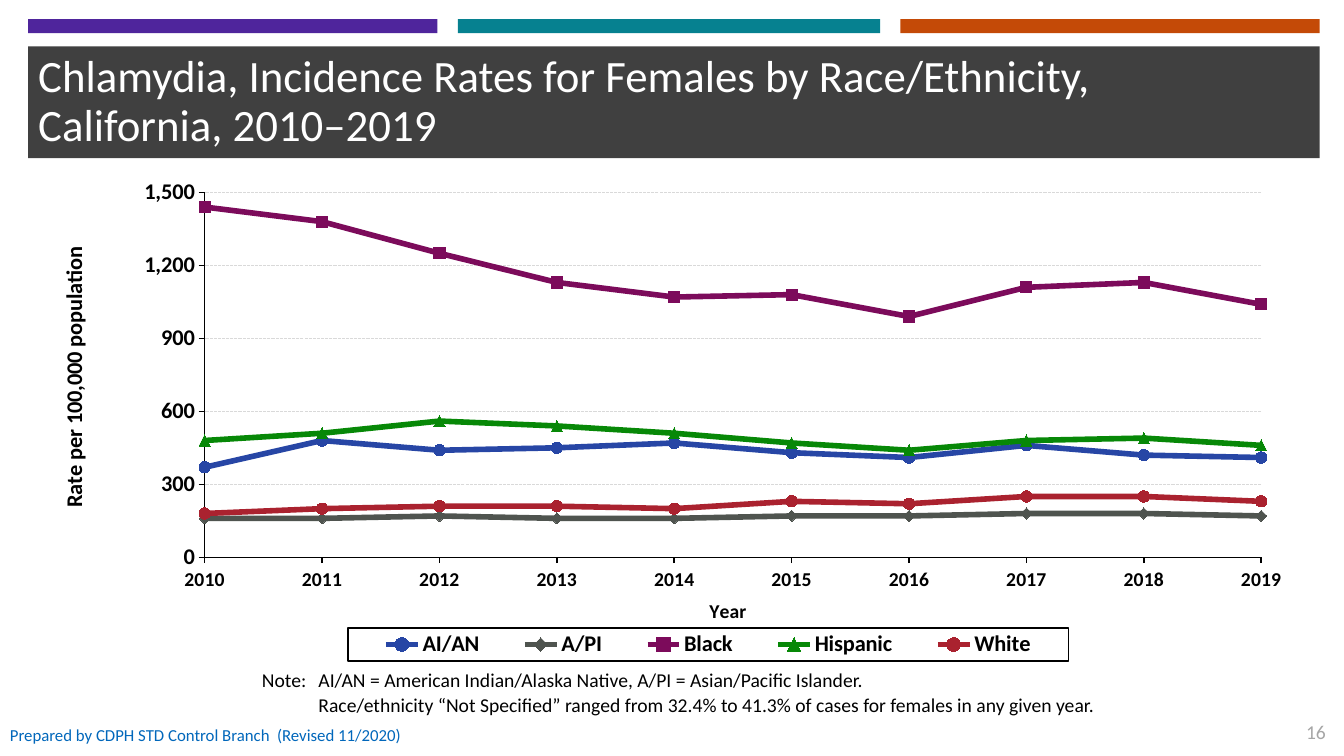
from dataclasses import dataclass

from lxml import etree
from pptx import Presentation
from pptx.chart.data import CategoryChartData
from pptx.dml.color import RGBColor
from pptx.enum.chart import XL_CHART_TYPE, XL_LEGEND_POSITION, XL_MARKER_STYLE, XL_TICK_MARK
from pptx.enum.dml import MSO_LINE
from pptx.enum.shapes import MSO_SHAPE
from pptx.enum.text import MSO_ANCHOR, PP_ALIGN
from pptx.oxml import parse_xml
from pptx.oxml.ns import nsdecls, qn
from pptx.util import Inches, Pt

FONT = "Calibri"
BLACK, WHITE, FOOTER_BLUE = "000000", "FFFFFF", "0167BB"
RECT = MSO_SHAPE.RECTANGLE
TOP, MIDDLE = MSO_ANCHOR.TOP, MSO_ANCHOR.MIDDLE
LEFT, RIGHT = PP_ALIGN.LEFT, PP_ALIGN.RIGHT
CIRCLE, DIAMOND = XL_MARKER_STYLE.CIRCLE, XL_MARKER_STYLE.DIAMOND
SQUARE, TRIANGLE = XL_MARKER_STYLE.SQUARE, XL_MARKER_STYLE.TRIANGLE
LINE_MARKERS, BOTTOM = XL_CHART_TYPE.LINE_MARKERS, XL_LEGEND_POSITION.BOTTOM
TICK_OUT, TICK_NONE = XL_TICK_MARK.OUTSIDE, XL_TICK_MARK.NONE
DASHED = MSO_LINE.SQUARE_DOT
CHART_W, CHART_H = 12.45, 5.06


@dataclass
class Bar:
    left: float
    top: float
    width: float
    height: float
    color: str


@dataclass
class Label:
    left: float
    top: float
    width: float
    height: float
    lines: list[str]
    size: int
    color: str
    anchor: int = TOP
    align: int = LEFT
    wrap: bool = True


@dataclass
class Group:
    name: str
    color: str
    marker: int
    outlined: bool
    rates: list[int]


BARS = [
    Bar(0.28, 0.46, 12.81, 1.11, "404040"),
    Bar(0.28, 0.19, 4.06, 0.14, "4F259C"),
    Bar(4.54, 0.19, 4.19, 0.14, "068190"),
    Bar(8.93, 0.19, 4.16, 0.14, "C44A07"),
]
LABELS = [
    Label(12.82, 7.09, 0.43, 0.34, ["16"], 14, "A6A6A6", align=RIGHT, wrap=False),
    Label(0, 7.09, 2.8, 0.4, ["Prepared by CDPH STD Control Branch"], 12, FOOTER_BLUE, MIDDLE),
    Label(2.65, 7.09, 1.5, 0.4, ["(Revised 11/2020)"], 12, FOOTER_BLUE, MIDDLE),
]
TITLE = Label(0.28, 0.46, 12.81, 1.11,
              ["Chlamydia, Incidence Rates for Females by Race/Ethnicity, ",
               "California, 2010–2019"], 32, WHITE, MIDDLE)
NOTE = Label(2.25, 6.58, 8.85, 0.59,
             ["\tNote:\tAI/AN = American Indian/Alaska Native, A/PI = Asian/Pacific Islander.",
              "\t\tRace/ethnicity “Not Specified” ranged from 32.4% to 41.3% of cases "
              "for females in any given year."], 14, BLACK)
NOTE_TABS = [(0.69, "r"), (0.81, "l")]
YEARS = [str(year) for year in range(2010, 2020)]
GROUPS = [
    Group("AI/AN", "2746A5", CIRCLE, False, [370, 480, 440, 450, 470, 430, 410, 460, 420, 410]),
    Group("A/PI", "4F544F", DIAMOND, True, [160, 160, 170, 160, 160, 170, 170, 180, 180, 170]),
    Group("Black", "7C0B5B", SQUARE, False,
          [1440, 1380, 1250, 1130, 1070, 1080, 990, 1110, 1130, 1040]),
    Group("Hispanic", "078807", TRIANGLE, False,
          [480, 510, 560, 540, 510, 470, 440, 480, 490, 460]),
    Group("White", "AA222F", CIRCLE, True, [180, 200, 210, 210, 200, 230, 220, 250, 250, 230]),
]


def rgb(color: str) -> RGBColor:
    return RGBColor.from_string(color)


def style_font(font, size: float, color: str, bold: bool = False) -> None:
    font.name, font.size, font.bold = FONT, Pt(size), bold
    font.color.rgb = rgb(color)


def style_line(line, color: str, width: float) -> None:
    line.color.rgb = rgb(color)
    line.width = Pt(width)


def add_bar(s, bar: Bar) -> None:
    sp = s.shapes.add_shape(RECT, Inches(bar.left), Inches(bar.top),
                            Inches(bar.width), Inches(bar.height))
    sp.shadow.inherit = False
    sp.fill.solid()
    sp.fill.fore_color.rgb = rgb(bar.color)
    sp.line.fill.background()


def add_label(s, label: Label, one_paragraph: bool = False):
    sp = s.shapes.add_textbox(Inches(label.left), Inches(label.top),
                              Inches(label.width), Inches(label.height))
    tf = sp.text_frame
    tf.word_wrap = label.wrap
    tf.vertical_anchor = label.anchor
    p = tf.paragraphs[0]
    for i, line in enumerate(label.lines):
        if i and one_paragraph:
            p.add_line_break()
        elif i:
            p = tf.add_paragraph()
        p.alignment = label.align
        r = p.add_run()
        r.text = line
        style_font(r.font, label.size, label.color)
    return tf


def add_tabs(p, tabs: list[tuple[float, str]]) -> None:
    tab_list = etree.SubElement(p._p.get_or_add_pPr(), qn("a:tabLst"))
    for pos, align in tabs:
        etree.SubElement(tab_list, qn("a:tab"), pos=str(Inches(pos)), algn=align)


def place(parent, after: str, inner: bool = False, **inches: float) -> None:
    """Set a chart part's place by x, y, w and h in inches within the chart."""
    for old in parent.findall(qn("c:layout")):
        parent.remove(old)
    settings = {"layoutTarget": "inner"} if inner else {}
    settings |= {"xMode": "edge", "yMode": "edge"}
    for tag, length in inches.items():
        settings[tag] = str(length / (CHART_W if tag in "xw" else CHART_H))
    layout = etree.Element(qn("c:layout"))
    manual = etree.SubElement(layout, qn("c:manualLayout"))
    for tag, value in settings.items():
        etree.SubElement(manual, qn(f"c:{tag}"), val=value)
    parent.insert(parent.index(parent.find(qn(after))) + 1 if after else 0, layout)


def area_format(line: str):
    return parse_xml(f'<c:spPr {nsdecls("c", "a")}><a:solidFill><a:srgbClr val="{WHITE}"/>'
                     f'</a:solidFill><a:ln w="12700">{line}</a:ln></c:spPr>')


def style_axis(axis, title: str, size: int, rotation: int, x: float, y: float) -> None:
    axis.major_tick_mark, axis.minor_tick_mark = TICK_OUT, TICK_NONE
    style_font(axis.tick_labels.font, size, BLACK, True)
    style_line(axis.format.line, BLACK, 1.06)
    r = axis.axis_title.text_frame.paragraphs[0].add_run()
    r.text = title
    style_font(r.font, size, BLACK, True)
    element = axis.axis_title.element
    element.find(f".//{qn('a:bodyPr')}").set("rot", str(rotation * 60000))
    place(element, "c:tx", x=x, y=y)


def add_rate_chart(s) -> None:
    data = CategoryChartData(number_format="#,##0")
    data.categories = YEARS
    for group in GROUPS:
        data.add_series(group.name, group.rates)
    chart = s.shapes.add_chart(LINE_MARKERS, Inches(0.45), Inches(1.6),
                               Inches(CHART_W), Inches(CHART_H), data).chart
    chart.has_title = False
    style_font(chart.font, 16, BLACK, True)
    chart.plots[0].vary_by_categories = False
    for series, group in zip(chart.plots[0].series, GROUPS):
        series.smooth = False
        style_line(series.format.line, group.color, 4)
        marker = series.marker
        marker.style, marker.size = group.marker, 8
        marker.format.fill.solid()
        marker.format.fill.fore_color.rgb = rgb(group.color)
        if group.outlined:
            marker.format.line.color.rgb = rgb(group.color)
        else:
            marker.format.line.fill.background()

    style_axis(chart.category_axis, "Year", 14, 0, 6.55, 4.29)
    rates = chart.value_axis
    style_axis(rates, "Rate per 100,000 population", 16, -90, 0.09, 0.81)
    rates.minimum_scale, rates.maximum_scale, rates.major_unit = 0, 1500, 300
    rates.tick_labels.number_format = "#,##0"
    rates.tick_labels.number_format_is_linked = False
    style_line(rates.major_gridlines.format.line, "D9D9D9", 0.75)
    rates.major_gridlines.format.line.dash_style = DASHED
    value_axis = chart.element.find(f".//{qn('c:valAx')}")
    for old in value_axis.findall(qn("c:crossBetween")):
        value_axis.remove(old)
    value_axis.find(qn("c:crosses")).addnext(etree.Element(qn("c:crossBetween"), val="midCat"))

    chart.has_legend = True
    chart.legend.position = BOTTOM
    chart.legend.include_in_layout = False
    style_font(chart.legend.font, 16, BLACK, True)
    legend = chart.element.find(f".//{qn('c:legend')}")
    place(legend, "c:legendPos", x=3, y=4.63, w=7.15, h=0.33)
    outline = f'<a:solidFill><a:srgbClr val="{BLACK}"/></a:solidFill>'
    legend.find(qn("c:txPr")).addprevious(area_format(outline))
    plot_area = chart.element.find(f".//{qn('c:plotArea')}")
    place(plot_area, "", inner=True, x=1.58, y=0.31, w=10.48, h=3.62)
    plot_area.append(area_format("<a:noFill/>"))
    chart.element.find(qn("c:chart")).addnext(area_format("<a:noFill/>"))


def main() -> None:
    prs = Presentation()
    prs.slide_width, prs.slide_height = Inches(13.33), Inches(7.5)
    s = prs.slides.add_slide(prs.slide_layouts[6])
    for bar in BARS:
        add_bar(s, bar)
    for label in LABELS:
        add_label(s, label)
    add_label(s, TITLE, one_paragraph=True).paragraphs[0].line_spacing = 0.9
    add_rate_chart(s)
    for p in add_label(s, NOTE).paragraphs:
        p.space_after = Pt(1)
        add_tabs(p, NOTE_TABS)
    prs.save("out.pptx")


if __name__ == "__main__":
    main()
